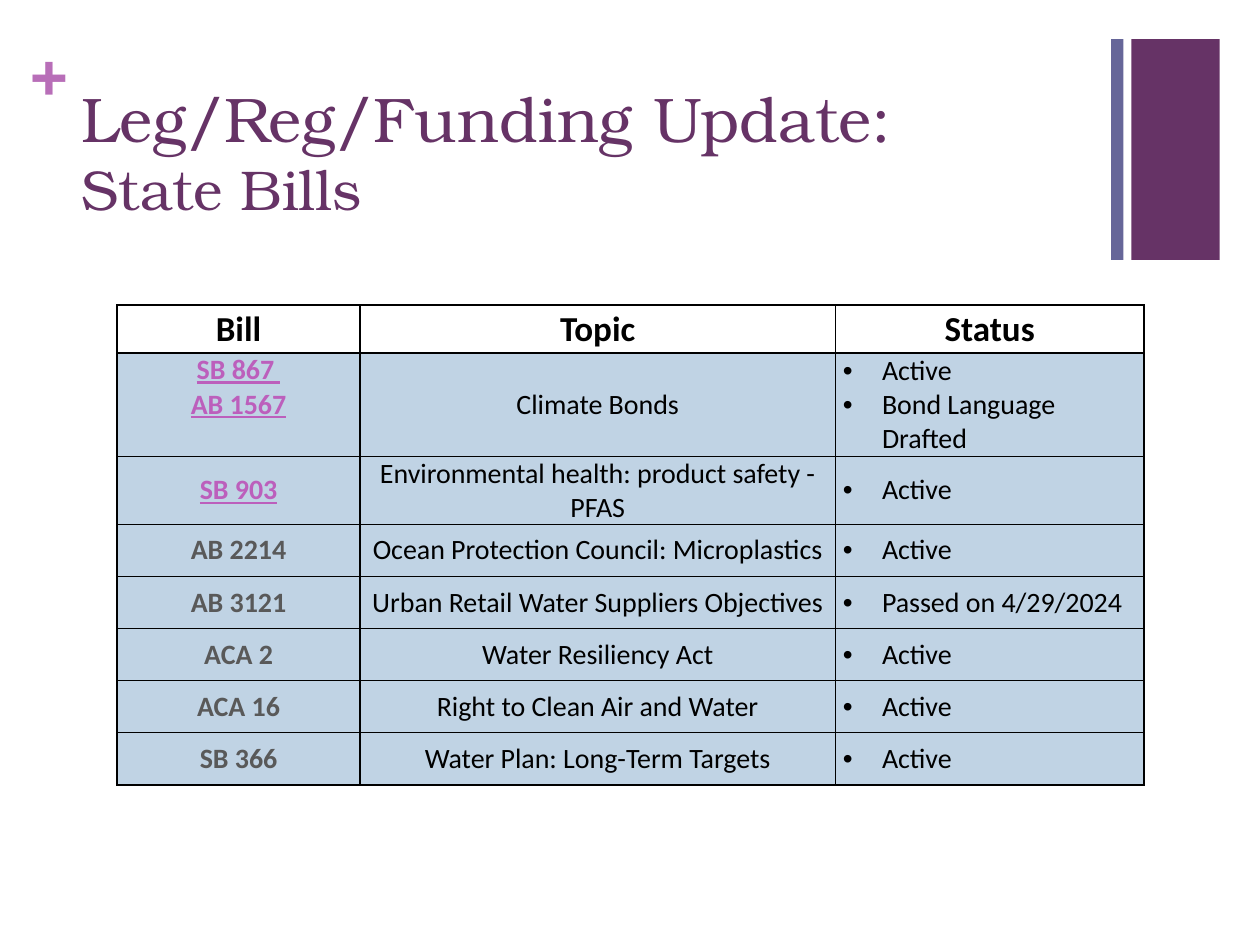
from dataclasses import dataclass

from lxml.etree import SubElement
from pptx import Presentation
from pptx.dml.color import RGBColor
from pptx.enum.shapes import MSO_SHAPE as Shape
from pptx.enum.text import MSO_ANCHOR as Anchor, PP_ALIGN as Align
from pptx.oxml import parse_xml
from pptx.oxml.ns import nsdecls, qn
from pptx.util import Cm, Pt

COLORS = {
    "plum": "663366",
    "slate": "666699",
    "plus": "B86EB8",
    "link": "BC5FBC",
    "gray": "595959",
    "black": "000000",
    "white": "FFFFFF",
    "row": "C0D3E4",
}
TITLE_FONT = "TeX Gyre Bonum"
TABLE_FONT = "Calibri"


@dataclass
class Bar:
    left: float
    width: float
    color: str


@dataclass
class Bill:
    numbers: str
    topic: str
    status: str
    height: float = 1.05
    linked: bool = False


@dataclass
class CellStyle:
    size: int = 16
    color: str = "black"
    fill: str = "row"
    bold: bool = False
    underline: bool = False
    bulleted: bool = False
    anchor: Anchor = Anchor.MIDDLE
    margin_x: float = 0.15
    margin_y: float = 0


BARS = [Bar(22.81, 1.78, "plum"), Bar(22.4, 0.25, "slate")]
HEADINGS = ["Bill", "Topic", "Status"]
COLUMN_WIDTHS = [4.9, 9.58, 6.22]
HEADER_HEIGHT = 0.97
BILLS = [
    Bill("SB 867 \nAB 1567", "Climate Bonds", "Active\nBond Language Drafted", 2.08, True),
    Bill("SB 903", "Environmental health: product safety - PFAS", "Active", 1.37, True),
    Bill("AB 2214", "Ocean Protection Council: Microplastics", "Active"),
    Bill("AB 3121", "Urban Retail Water Suppliers Objectives", "Passed on 4/29/2024"),
    Bill("ACA 2", "Water Resiliency Act", "Active"),
    Bill("ACA 16", "Right to Clean Air and Water", "Active"),
    Bill("SB 366", "Water Plan: Long-Term Targets", "Active"),
]


def rgb(name: str) -> RGBColor:
    return RGBColor.from_string(COLORS[name])


def format_font(font, face: str, size: int, color: str, bold: bool = False) -> None:
    font.name, font.size, font.bold = face, Pt(size), bold
    font.color.rgb = rgb(color)


def set_margins(target, x: float, y: float) -> None:
    target.margin_left = target.margin_right = Cm(x)
    target.margin_top = target.margin_bottom = Cm(y)


def draw_bar(slide, bar: Bar) -> None:
    block = slide.shapes.add_shape(Shape.RECTANGLE, Cm(bar.left), Cm(0.79), Cm(bar.width), Cm(4.45))
    block.shadow.inherit = False
    block.fill.solid()
    block.fill.fore_color.rgb = rgb(bar.color)
    block.line.fill.background()


def draw_plus(slide) -> None:
    plus = slide.shapes.add_textbox(Cm(0.61), Cm(0.64), Cm(0.74), Cm(1.55)).text_frame
    set_margins(plus, 0, 0)
    plus.text = "+"
    format_font(plus.paragraphs[0].runs[0].font, TITLE_FONT, 36, "plus", True)


def fill_title(title) -> None:
    title.left, title.top, title.width, title.height = Cm(1.4), Cm(1.35), Cm(20.98), Cm(3.1)
    frame = title.text_frame
    frame.word_wrap = True
    frame.vertical_anchor = Anchor.TOP
    set_margins(frame, 0.25, 0.25)
    frame.text = "Leg/Reg/Funding Update: \vState Bills"
    heading = frame.paragraphs[0]
    heading.alignment = Align.LEFT
    for run, size in zip(heading.runs, (36, 32)):
        format_font(run.font, TITLE_FONT, size, "plum")


def add_borders(cell) -> None:
    """Put a thin black line on all four sides."""
    properties = cell._tc.get_or_add_tcPr()
    for index, side in enumerate(("lnL", "lnR", "lnT", "lnB")):
        properties.insert(index, parse_xml(
            f'<a:{side} {nsdecls("a")} w="12700"><a:solidFill>'
            f'<a:srgbClr val="{COLORS["black"]}"/></a:solidFill></a:{side}>'))


def add_bullet(paragraph) -> None:
    properties = paragraph._p.get_or_add_pPr()
    properties.set("marL", str(Cm(0.79)))
    properties.set("indent", str(-Cm(0.79)))
    SubElement(properties, qn("a:buFont"), typeface="Arial")
    SubElement(properties, qn("a:buChar"), char="•")


def fill_cell(cell, text: str, style: CellStyle) -> None:
    cell.text_frame.text = text
    cell.vertical_anchor = style.anchor
    set_margins(cell, style.margin_x, style.margin_y)
    cell.fill.solid()
    cell.fill.fore_color.rgb = rgb(style.fill)
    add_borders(cell)
    for paragraph in cell.text_frame.paragraphs:
        if style.bulleted:
            add_bullet(paragraph)
        else:
            paragraph.alignment = Align.CENTER
        for run in paragraph.runs:
            format_font(run.font, TABLE_FONT, style.size, style.color, style.bold)
            run.font.underline = style.underline


def number_style(bill: Bill) -> CellStyle:
    return CellStyle(
        color="link" if bill.linked else "gray",
        bold=True,
        underline=bill.linked,
        anchor=Anchor.TOP if "\n" in bill.numbers else Anchor.MIDDLE,
    )


def draw_bill_table(slide) -> None:
    heights = [HEADER_HEIGHT] + [bill.height for bill in BILLS]
    table = slide.shapes.add_table(
        len(heights), len(HEADINGS), Cm(2.36), Cm(6.15),
        Cm(sum(COLUMN_WIDTHS)), Cm(sum(heights))).table
    for column, width in zip(table.columns, COLUMN_WIDTHS):
        column.width = Cm(width)
    for row, height in zip(table.rows, heights):
        row.height = Cm(height)

    header = CellStyle(size=20, fill="white", bold=True, anchor=Anchor.BOTTOM,
                       margin_x=0.1, margin_y=0.05)
    for column, heading in enumerate(HEADINGS):
        fill_cell(table.cell(0, column), heading, header)
    for row, bill in enumerate(BILLS, start=1):
        fill_cell(table.cell(row, 0), bill.numbers, number_style(bill))
        fill_cell(table.cell(row, 1), bill.topic, CellStyle())
        fill_cell(table.cell(row, 2), bill.status, CellStyle(bulleted=True))


def main() -> None:
    deck = Presentation()
    deck.slide_width, deck.slide_height = Cm(25.4), Cm(19.05)
    slide = deck.slides.add_slide(deck.slide_layouts[5])
    for bar in BARS:
        draw_bar(slide, bar)
    draw_plus(slide)
    fill_title(slide.shapes.title)
    draw_bill_table(slide)
    deck.save("out.pptx")


if __name__ == "__main__":
    main()
